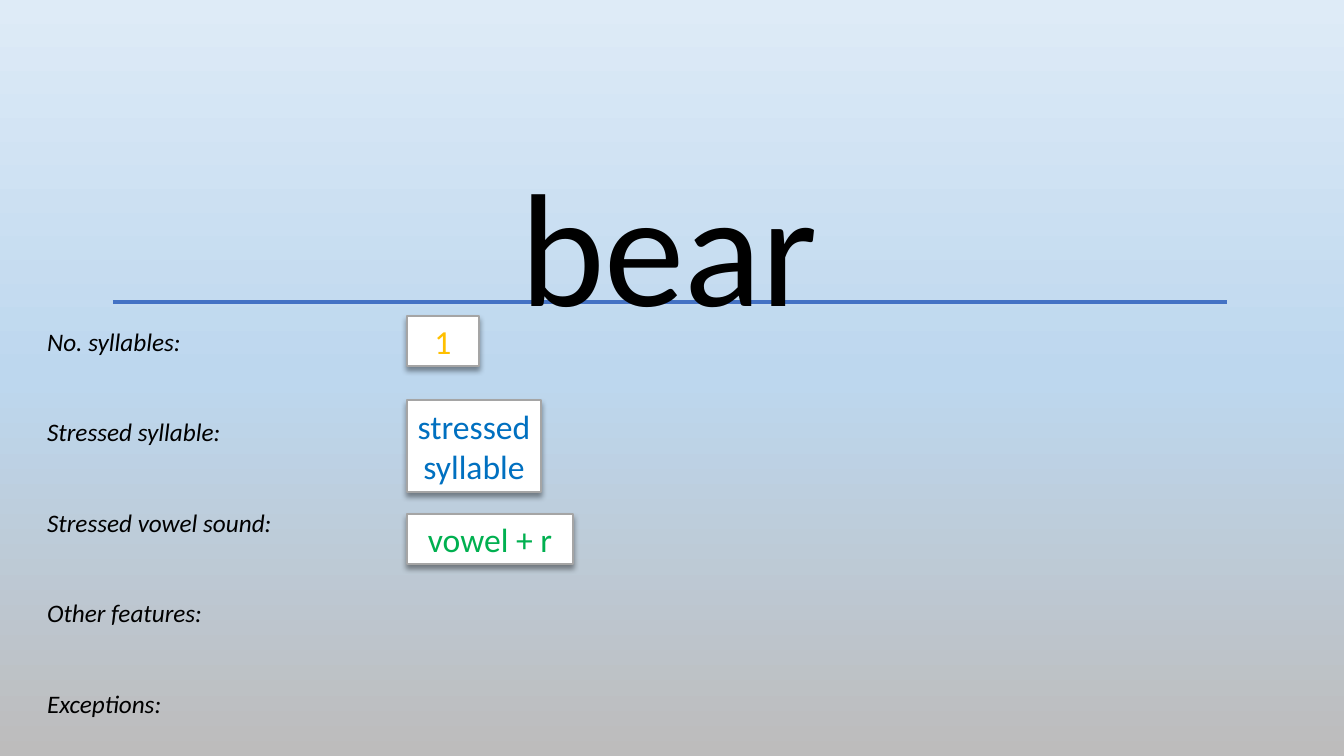
from pptx import Presentation
from pptx import util as u
from pptx.dml.color import RGBColor
from pptx.enum import shapes, text
from pptx.oxml.ns import qn
from lxml import etree

PX = 914400 / 100.8
FONT = "Calibri"
BLACK = RGBColor(0x00, 0x00, 0x00)
WHITE = RGBColor(0xFF, 0xFF, 0xFF)
GREY = RGBColor(0xA5, 0xA5, 0xA5)
BLUE = RGBColor(0x00, 0x70, 0xC0)
GREEN = RGBColor(0x00, 0xB0, 0x50)
AMBER = RGBColor(0xFF, 0xC0, 0x00)
RULE_BLUE = RGBColor(0x44, 0x72, 0xC4)
SKY = RGBColor(0xDE, 0xEB, 0xF7)
MIST = RGBColor(0xBD, 0xD7, 0xEE)
ASH = RGBColor(0xBD, 0xBC, 0xBC)

ANSWER_LEFT = 407
# Text, top, width, height, colour
ANSWERS = [
    ("stressed\nsyllable", 400, 134, 92, BLUE),
    ("vowel + r", 514, 166, 50, GREEN),
    ("1", 316, 72, 50, AMBER),
]
LABELS = ["No. syllables:", "Stressed syllable:", "Stressed vowel sound:",
          "Other features:", "Exceptions:"]


def px(length):
    return u.Emu(round(length * PX))


def add_color(parent, color, alpha=None):
    node = etree.SubElement(parent, qn("a:srgbClr"), val=str(color))
    if alpha is not None:
        etree.SubElement(node, qn("a:alpha"), val=str(alpha * 1000))


def paint_background(page, colors):
    fill = page.background.fill
    fill.gradient()
    fill.gradient_angle = 270
    stops = page.element.find(".//" + qn("a:gsLst"))
    stops.clear()
    for index, color in enumerate(colors):
        position = 100000 * index // (len(colors) - 1)
        add_color(etree.SubElement(stops, qn("a:gs"), pos=str(position)), color)


def place(shape, left, top, width, height):
    shape.left, shape.top = px(left), px(top)
    shape.width, shape.height = px(width), px(height)


def write(shape, words, size, color, align, anchor, italic=False):
    frame = shape.text_frame
    frame.text = words
    frame.auto_size = text.MSO_AUTO_SIZE.NONE
    frame.vertical_anchor = anchor
    for para in frame.paragraphs:
        para.alignment = align
        para.space_before = u.Pt(0)
        for span in para.runs:
            span.font.name = FONT
            span.font.size = u.Pt(size)
            span.font.italic = italic
            span.font.color.rgb = color


def add_answer(page, words, top, width, height, color):
    box = page.shapes.add_shape(shapes.MSO_SHAPE.RECTANGLE, px(ANSWER_LEFT),
                                px(top), px(width), px(height))
    box.fill.solid()
    box.fill.fore_color.rgb = WHITE
    box.line.color.rgb = GREY
    box.line.width = u.Pt(1)
    write(box, words, 24, color, text.PP_ALIGN.CENTER, text.MSO_ANCHOR.MIDDLE)
    box.text_frame.word_wrap = False
    # Soft shadow below the box
    box.shadow.inherit = False
    effects = box.element.spPr.find(qn("a:effectLst"))
    shadow = etree.SubElement(effects, qn("a:outerShdw"), blurRad=str(u.Pt(4)),
                              dist=str(u.Pt(3)), dir="5400000", rotWithShape="0")
    add_color(shadow, BLACK, alpha=40)


def add_rule(page, left, right, y):
    rule = page.shapes.add_connector(shapes.MSO_CONNECTOR.STRAIGHT,
                                     px(left), px(y), px(right), px(y))
    rule.line.color.rgb = RULE_BLUE
    rule.line.width = u.Pt(3)
    etree.SubElement(rule.element.spPr, qn("a:effectLst"))
    return rule


def fill_labels(body):
    place(body, 37, 321, 247, 407)
    write(body, "\n".join(LABELS), 18, BLACK, text.PP_ALIGN.LEFT,
          text.MSO_ANCHOR.TOP, italic=True)
    for index, para in enumerate(body.text_frame.paragraphs):
        para.space_before = u.Pt(43 if index else 0)
        props = para._p.get_or_add_pPr()
        props.set("marL", "0")
        props.set("indent", "0")
        etree.SubElement(props, qn("a:buNone"))


def main():
    deck = Presentation()
    deck.slide_width, deck.slide_height = px(1344), px(756)
    page = deck.slides.add_slide(deck.slide_layouts[1])
    paint_background(page, [SKY, MIST, ASH])

    # Word on the rule, with the rule behind it
    title = page.shapes.title
    place(title, 173, 140, 992, 206)
    write(title, "bear", 115, BLACK, text.PP_ALIGN.CENTER, text.MSO_ANCHOR.TOP)
    rule = add_rule(page, 113, 1227, 302)
    title.element.addprevious(rule.element)

    # Labels and their answers
    fill_labels(page.placeholders[1])
    for answer in ANSWERS:
        add_answer(page, *answer)

    deck.save("out.pptx")


if __name__ == "__main__":
    main()
